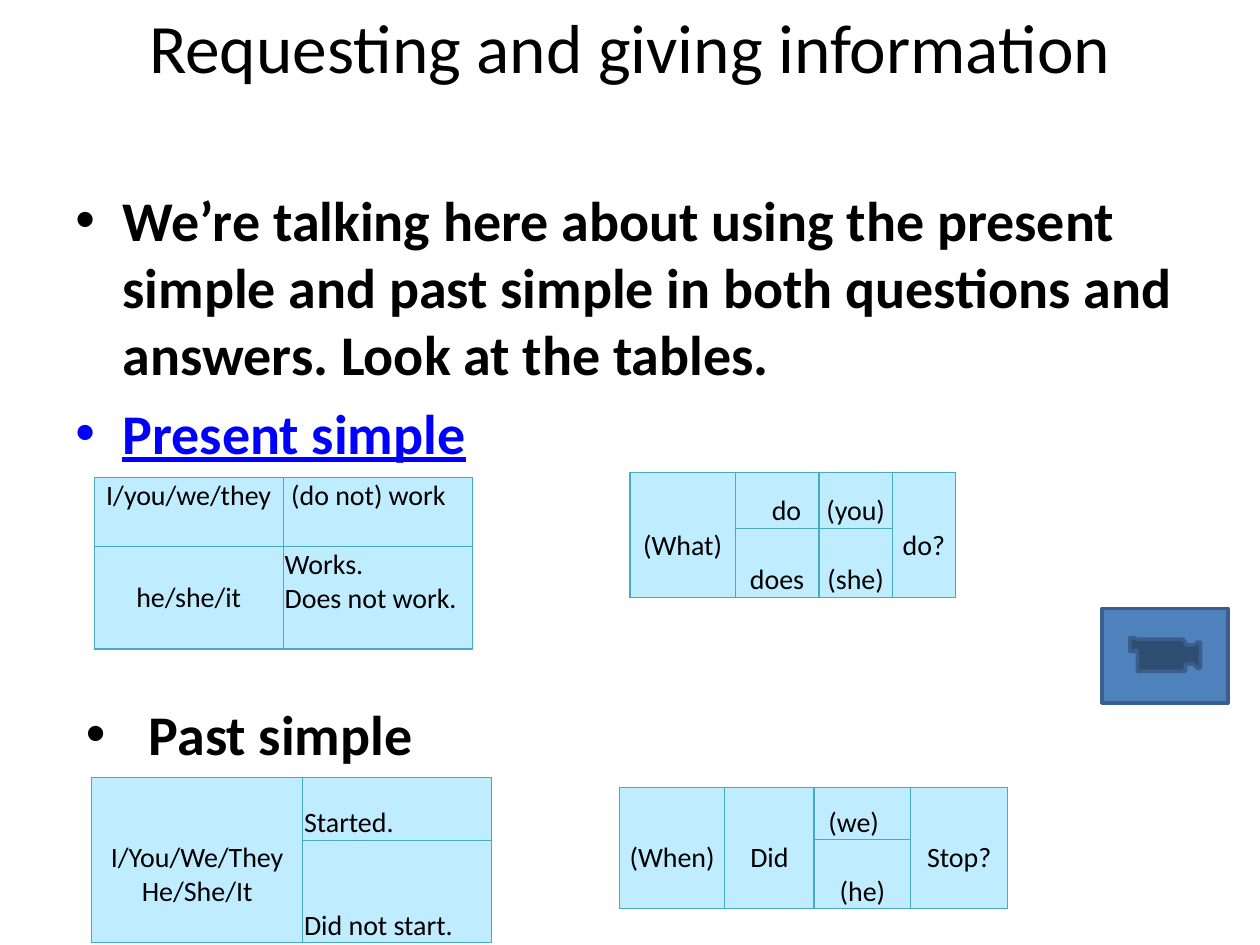
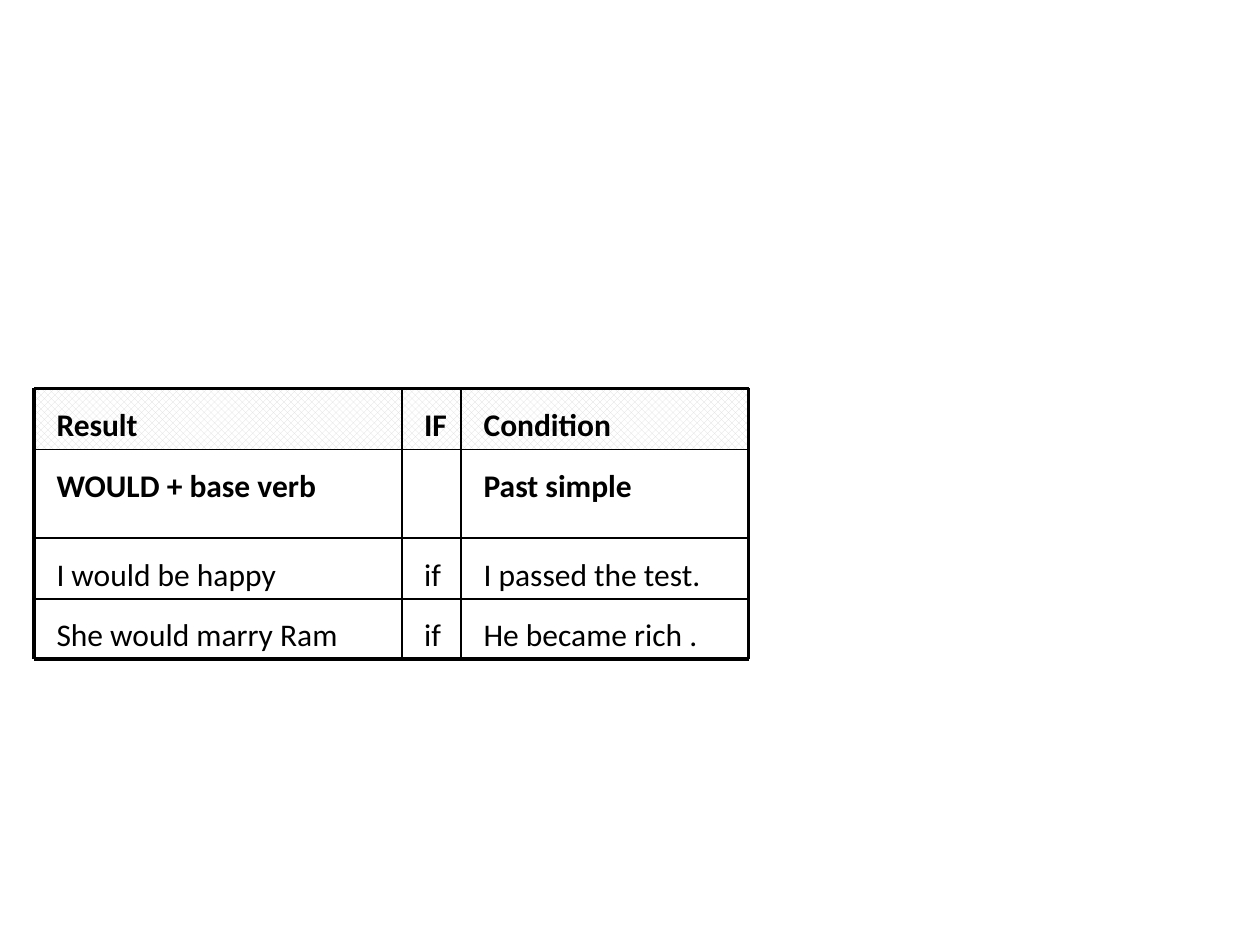
import pptx
import pptx.util
import pptx.dml.color
import pptx.enum.dml
import pptx.enum.shapes
import pptx.enum.text
import pptx.oxml
import pptx.oxml.ns
from lxml import etree

Cm = pptx.util.Cm
Pt = pptx.util.Pt
ALIGN = pptx.enum.text.PP_ALIGN
ANCHOR = pptx.enum.text.MSO_ANCHOR
SHAPE = pptx.enum.shapes.MSO_SHAPE
NS = pptx.oxml.ns.nsdecls("a")

HUES = {
    "ink": "000000",
    "link": "0000FF",
    "cell": "BFECFF",
    "edge": "46AAC5",
    "button": "4F81BD",
    "rim": "3A5F8C",
    "weave": "DDDDDD",
    "paper": "FFFFFF",
}
FONT = "Calibri"
LINE = 0.68


def hue(name):
    return pptx.dml.color.RGBColor.from_string(HUES[name])


def apply(item, values):
    for name, value in values.items():
        setattr(item, name, value)


def format_font(font, size, color="ink", **extra):
    apply(font, {"name": FONT, "size": Pt(size), **extra})
    font.color.rgb = hue(color)


def add_bullet(para, indent):
    props = para._p.get_or_add_pPr()
    width = Cm(indent)
    apply_xml = {"marL": width, "indent": -width}
    for name, value in apply_xml.items():
        props.set(name, str(int(value)))
    props.append(pptx.oxml.parse_xml(f'<a:buFont {NS} typeface="Arial"/>'))
    props.append(pptx.oxml.parse_xml(f'<a:buChar {NS} char="•"/>'))


def add_text(slide, place, items, size, align=ALIGN.LEFT, indent=None, inset=None):
    frame = slide.shapes.add_textbox(*map(Cm, place)).text_frame
    apply(frame, {"word_wrap": True, "vertical_anchor": ANCHOR.TOP})
    if inset is not None:
        sides = ("left", "top", "right", "bottom")
        apply(frame, {f"margin_{side}": Cm(inset) for side in sides})
    for rank, (words, look) in enumerate(items):
        para = frame.paragraphs[0] if rank == 0 else frame.add_paragraph()
        para.alignment = align
        if rank:
            para.space_before = Pt(size * 0.2)
        if indent:
            add_bullet(para, indent)
        run = para.add_run()
        run.text = words
        format_font(run.font, size, **look)


def add_edges(cell):
    props = cell._tc.get_or_add_tcPr()
    for side in "LRTB":
        props.append(pptx.oxml.parse_xml(
            f'<a:ln{side} {NS} w="{int(Pt(0.75))}"><a:solidFill>'
            f'<a:srgbClr val="{HUES["edge"]}"/></a:solidFill></a:ln{side}>'))


def add_grid(slide, spot, cols, rows, cells, lift=False):
    place = (*spot, sum(cols), sum(rows))
    table = slide.shapes.add_table(len(rows), len(cols), *map(Cm, place)).table
    apply(table, {"first_row": False, "horz_banding": False})
    for col, width in zip(table.columns, cols):
        col.width = Cm(width)
    for row, height in zip(table.rows, rows):
        row.height = Cm(height)
    for cell in table.iter_cells():
        add_edges(cell)
        cell.fill.solid()
        cell.fill.fore_color.rgb = hue("cell")
    for (row, col), words, align, pad, span in cells:
        cell = table.cell(row, col)
        if span:
            cell.merge(table.cell(row + 1, col))
        apply(cell, {
            "vertical_anchor": ANCHOR.BOTTOM,
            "margin_left": Cm(0.03 + pad),
            "margin_right": Cm(0.03),
            "margin_top": Cm(0.03),
            "margin_bottom": Cm(LINE if lift or span else 0),
        })
        cell.text = words
        for para in cell.text_frame.paragraphs:
            para.alignment = align
            format_font(para.runs[0].font, 16)


def mid(row, col, words, pad=0, span=False):
    return (row, col), words, ALIGN.CENTER, pad, span


def left(row, col, words, pad=0):
    return (row, col), words, ALIGN.LEFT, pad, False


def add_movie(slide, place):
    shape = slide.shapes.add_shape(SHAPE.ACTION_BUTTON_MOVIE, *map(Cm, place))
    shape.shadow.inherit = False
    shape.fill.solid()
    shape.fill.fore_color.rgb = hue("button")
    shape.line.color.rgb = hue("rim")
    shape.line.width = Pt(2)


def add_weave(slide, place):
    shape = slide.shapes.add_shape(SHAPE.RECTANGLE, *map(Cm, place))
    shape.shadow.inherit = False
    shape.fill.patterned()
    shape.fill.pattern = pptx.enum.dml.MSO_PATTERN.SOLID_DIAMOND
    shape.fill.fore_color.rgb = hue("weave")
    shape.fill.back_color.rgb = hue("paper")
    shape.line.fill.background()


def add_rule(slide, ends, width):
    kind = pptx.enum.shapes.MSO_CONNECTOR.STRAIGHT
    rule = slide.shapes.add_connector(kind, *map(Cm, ends))
    rule.line.color.rgb = hue("ink")
    rule.line.width = Pt(width)
    etree.SubElement(rule._element.spPr, pptx.oxml.ns.qn("a:effectLst"))


def draw_tense(slide):
    bold = {"bold": True}
    add_text(slide, (1.27, 0.08, 22.86, 3.18),
             [("Requesting and giving information", {})],
             39.6, align=ALIGN.CENTER, inset=0)
    add_text(slide, (1.27, 3.61, 23.5, 15.44), [
        ("We’re talking here about using the present simple and past simple "
         "in both questions and answers. Look at the tables.", bold),
        ("Present simple", {**bold, "color": "link", "underline": True}),
    ], 32, indent=0.95)
    add_grid(slide, (1.9, 9.63), [3.81] * 2, [1.35, 2.03], [
        mid(0, 0, "I/you/we/they"),
        left(0, 1, "(do not) work", 0.13),
        mid(1, 0, "he/she/it"),
        left(1, 1, "Works.\nDoes not work."),
    ], lift=True)
    add_grid(slide, (1.85, 15.67), [4.25, 3.81], [1.27, 2.03], [
        mid(0, 0, "I/You/We/They\nHe/She/It", span=True),
        left(0, 1, "Started."),
        left(1, 1, "Did not start."),
    ])
    add_grid(slide, (12.7, 9.52), [2.12, 1.69, 1.48, 1.27], [1.13, 1.35], [
        mid(0, 0, "(What)", span=True),
        mid(0, 1, "do", 0.38),
        mid(0, 2, "(you)"),
        mid(0, 3, "do?", span=True),
        mid(1, 1, "does"),
        mid(1, 2, "(she)"),
    ])
    add_grid(slide, (12.49, 15.87), [2.12, 1.8, 1.95, 1.95], [1.06, 1.35], [
        mid(0, 0, "(When)", span=True),
        mid(0, 1, "Did", span=True),
        left(0, 2, "(we)", 0.26),
        mid(0, 3, "Stop?", span=True),
        mid(1, 2, "(he)"),
    ])
    add_text(slide, (1.48, 13.97, 8.26, 1.62), [("Past simple", bold)],
             32, indent=1.27)
    add_movie(slide, (22.22, 12.27, 2.54, 1.9))


def draw_would(slide):
    cols = [0.69, 8.1, 9.3, 15.09]
    rows = [7.83, 9.06, 10.85, 12.07, 13.28]
    widths = [7.6, 1.2, 6.8]
    for start, end in zip(cols, cols[1:]):
        add_weave(slide, (start, rows[0], end - start, rows[1] - rows[0]))
    for y in rows:
        add_rule(slide, (cols[0], y, cols[-1], y), 2 if y in (rows[0], rows[-1]) else 1)
    for x in cols:
        add_rule(slide, (x, rows[0], x, rows[-1]), 2 if x in (cols[0], cols[-1]) else 1)
    lines = [
        ("Result", "IF", "Condition"),
        ("WOULD + base verb", "", "Past simple"),
        ("I would be happy", "if", "I passed the test."),
        ("She would marry Ram", "if", "He became rich ."),
    ]
    for rank, (y, line) in enumerate(zip(rows, lines)):
        for x, width, words in zip(cols, widths, line):
            if words:
                add_text(slide, (x + 0.2, y + 0.21, width, 1.02),
                         [(words, {"bold": rank < 2})], 18)


def main():
    deck = pptx.Presentation()
    apply(deck, {"slide_width": Cm(25.4), "slide_height": Cm(19.05)})
    for draw in (draw_tense, draw_would):
        draw(deck.slides.add_slide(deck.slide_layouts[6]))
    deck.save("out.pptx")


if __name__ == "__main__":
    main()
